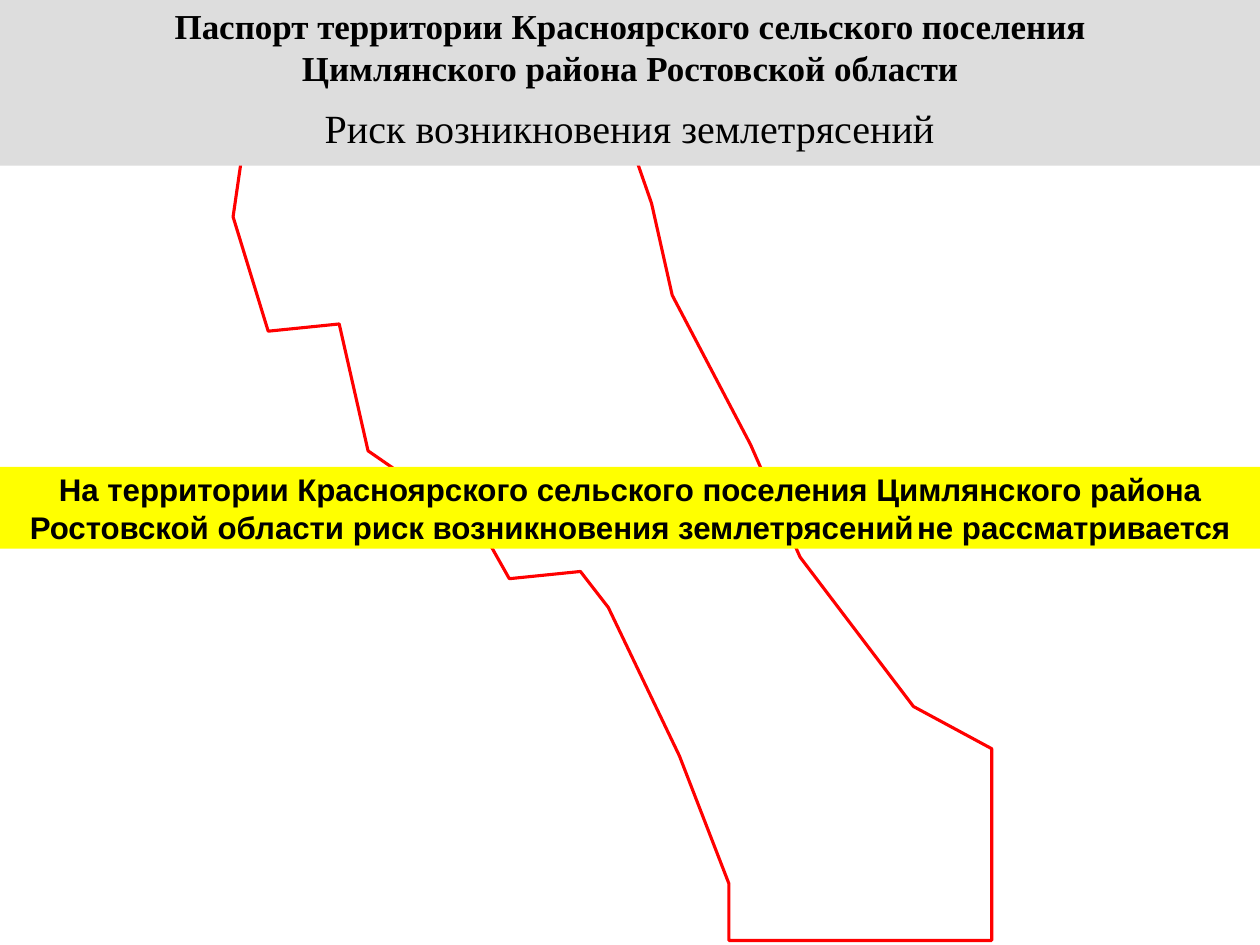
"""Build the territory passport slide on earthquake risk."""
from dataclasses import dataclass

from pptx import Presentation
from pptx import util as u
from pptx.dml.color import RGBColor
from pptx.enum import shapes, text


@dataclass(frozen=True)
class Theme:
    ink: RGBColor = RGBColor(0, 0, 0)
    header: RGBColor = RGBColor(0xDD, 0xDD, 0xDD)
    notice: RGBColor = RGBColor(0xFF, 0xFF, 0)
    border: RGBColor = RGBColor(0xFF, 0, 0)
    serif: str = "Times New Roman"
    sans: str = "Arial"
    subject: float = 32
    title: float = 28
    body: float = 25
    gap: float = 10


theme = Theme()
WIDTH, HEIGHT = 1008, 756

presentation = Presentation()
presentation.slide_width, presentation.slide_height = u.Pt(WIDTH), u.Pt(HEIGHT)
slide = presentation.slides.add_slide(presentation.slide_layouts[6])

boundary = [
    (793.4, 752.4), (793.4, 599), (730.8, 565.2), (640.1, 445.7),
    (600.5, 355.7), (537.8, 236.2), (521.3, 162.7), (475.9, 32.4),
    (299.5, 37.4), (198, 94.3), (186.5, 173.5), (214.6, 265),
    (271.4, 259.2), (294.5, 360.7), (385.2, 423.4), (407.5, 463),
    (464.4, 457.2), (486.7, 486), (543.6, 604.8), (583.2, 707),
    (583.2, 752.4),
]
points = [(u.Pt(x), u.Pt(y)) for x, y in boundary]
builder = slide.shapes.build_freeform(*points[0], scale=1.0)
builder.add_line_segments(points[1:], close=True)
territory = builder.convert_to_shape()
territory.shadow.inherit = False
territory.fill.background()
territory.line.color.rgb = theme.border
territory.line.width = u.Pt(2.5)

bands = [
    dict(
        top=72, height=60.5, fill=theme.header, inset=(10, 5),
        anchor=text.MSO_ANCHOR.MIDDLE, fit=text.MSO_AUTO_SIZE.NONE,
        font=theme.serif, bold=False,
        paragraphs=[[("Риск возникновения землетрясений", theme.subject)]],
    ),
    dict(
        top=0, height=74, fill=theme.header, inset=(7.2, 3.6),
        anchor=text.MSO_ANCHOR.TOP, fit=text.MSO_AUTO_SIZE.SHAPE_TO_FIT_TEXT,
        font=theme.serif, bold=True,
        paragraphs=[
            [("Паспорт территории Красноярского сельского поселения", theme.title)],
            [("Цимлянского района Ростовской области", theme.title)],
        ],
    ),
    dict(
        top=373.5, height=65.5, fill=theme.notice, inset=(5, 2.9),
        anchor=text.MSO_ANCHOR.MIDDLE, fit=text.MSO_AUTO_SIZE.SHAPE_TO_FIT_TEXT,
        font=theme.sans, bold=True,
        paragraphs=[[
            ("На территории Красноярского сельского поселения Цимлянского района "
             "Ростовской области риск возникновения землетрясений", theme.body),
            (" ", theme.gap),
            ("не рассматривается", theme.body),
        ]],
    ),
]

for band in bands:
    shape = slide.shapes.add_shape(
        shapes.MSO_SHAPE.RECTANGLE, 0, u.Pt(band["top"]), u.Pt(WIDTH), u.Pt(band["height"]))
    shape.shadow.inherit = False
    shape.fill.solid()
    shape.fill.fore_color.rgb = band["fill"]
    shape.line.fill.background()
    side, edge = map(u.Pt, band["inset"])
    frame_format = dict(
        margin_left=side, margin_right=side, margin_top=edge, margin_bottom=edge,
        word_wrap=True, vertical_anchor=band["anchor"], auto_size=band["fit"])
    for name, value in frame_format.items():
        setattr(shape.text_frame, name, value)
    for index, pieces in enumerate(band["paragraphs"]):
        frame = shape.text_frame
        paragraph = frame.add_paragraph() if index else frame.paragraphs[0]
        paragraph.alignment = text.PP_ALIGN.CENTER
        for words, size in pieces:
            run = paragraph.add_run()
            run.text = words
            run.font.color.rgb = theme.ink
            font_format = dict(name=band["font"], size=u.Pt(size), bold=band["bold"])
            for name, value in font_format.items():
                setattr(run.font, name, value)

presentation.save("out.pptx")
